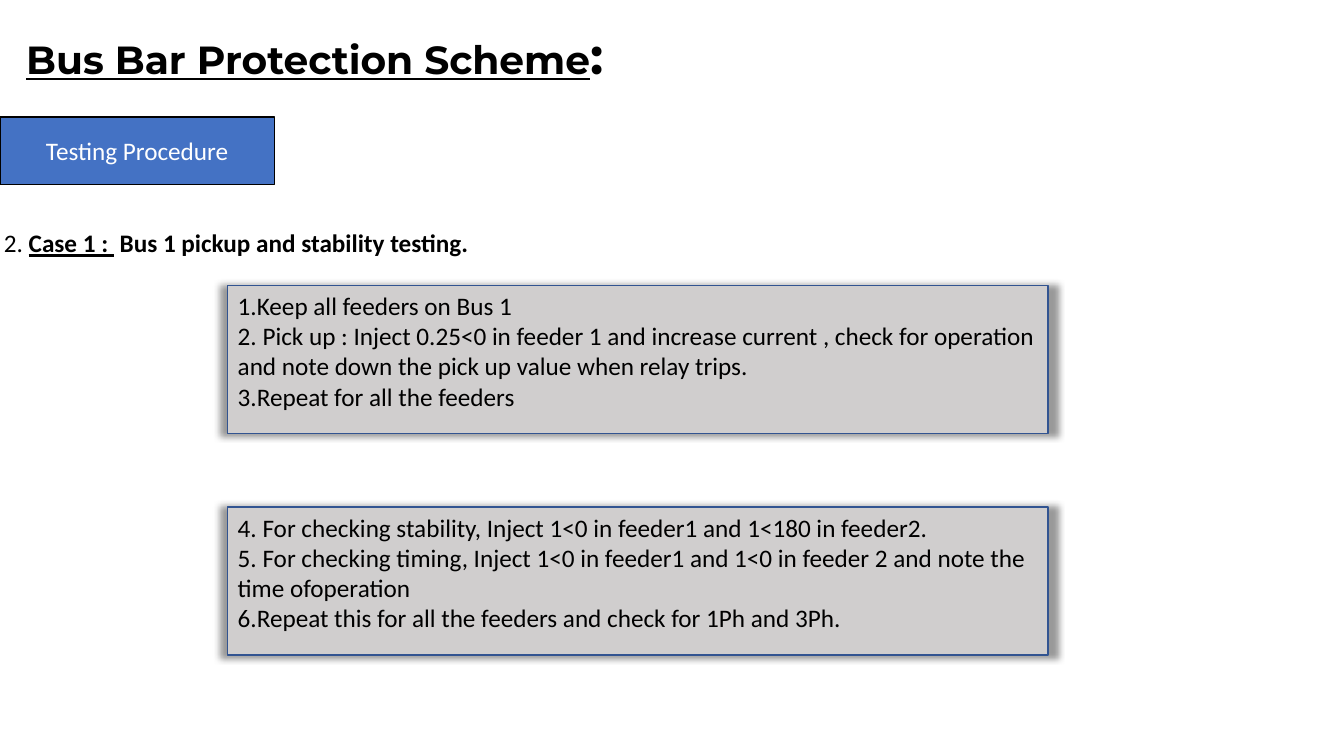
import pptx
import pptx.util
import pptx.oxml
from pptx.dml.color import RGBColor
from pptx.enum.shapes import MSO_SHAPE
from pptx.enum.text import MSO_ANCHOR, PP_ALIGN

Pt = pptx.util.Pt

BLACK = RGBColor(0x00, 0x00, 0x00)
WHITE = RGBColor(0xFF, 0xFF, 0xFF)
BLUE = RGBColor(0x44, 0x72, 0xC4)
NAVY = RGBColor(0x32, 0x54, 0x91)
GREY = RGBColor(0xD0, 0xCE, 0xCE)

STEPS = [
    [
        "1.Keep all feeders on Bus 1",
        "2. Pick up : Inject 0.25<0 in feeder 1 and increase current , "
        "check for operation and note down the pick up value when relay trips.",
        "3.Repeat for all the feeders",
    ],
    [
        "4. For checking stability, Inject 1<0 in feeder1 and 1<180 in feeder2.",
        "5. For checking timing, Inject 1<0 in feeder1 and 1<0 in feeder 2 "
        "and note the time ofoperation",
        "6.Repeat this for all the feeders and check for 1Ph and 3Ph.",
    ],
]

GLOW = (
    '<a:effectLst xmlns:a="http://schemas.openxmlformats.org/drawingml/2006/main">'
    '<a:outerShdw blurRad="63500" sx="102000" sy="102000" algn="ctr" rotWithShape="0">'
    '<a:srgbClr val="000000"><a:alpha val="40000"/></a:srgbClr>'
    '</a:outerShdw></a:effectLst>'
)


def style(para, size, color, name="Calibri"):
    font = para.font
    font.name, font.size, font.color.rgb = name, Pt(size), color


def add_runs(para, parts):
    """Add (text, bold, underline) parts and return the runs."""
    runs = []
    for text, bold, under in parts:
        run = para.add_run()
        run.text, run.font.bold, run.font.underline = text, bold, under
        runs.append(run)
    return runs


def add_title(slide, left, top, width, height):
    title = slide.shapes.title
    title.left, title.top = Pt(left), Pt(top)
    title.width, title.height = Pt(width), Pt(height)
    frame = title.text_frame
    frame.vertical_anchor = MSO_ANCHOR.TOP
    para = frame.paragraphs[0]
    para.alignment = PP_ALIGN.LEFT
    style(para, 28, BLACK, "Montserrat")
    runs = add_runs(para, [("Bus Bar Protection Scheme", True, True),
                           (":", True, False)])
    runs[1].font.size = Pt(36)


def add_panel(slide, left, top, width, height, fill, line):
    panel = slide.shapes.add_shape(
        MSO_SHAPE.RECTANGLE, Pt(left), Pt(top), Pt(width), Pt(height))
    panel.shadow.inherit = False
    panel.fill.solid()
    panel.fill.fore_color.rgb = fill
    panel.line.color.rgb = line
    panel.line.width = Pt(1)
    return panel


def add_label(slide, left, top, width, height):
    frame = add_panel(slide, left, top, width, height, BLUE, BLACK).text_frame
    frame.vertical_anchor = MSO_ANCHOR.MIDDLE
    para = frame.paragraphs[0]
    para.text = "Testing Procedure"
    para.alignment = PP_ALIGN.CENTER
    style(para, 18, WHITE)


def add_case(slide, left, top, width, height):
    box = slide.shapes.add_textbox(Pt(left), Pt(top), Pt(width), Pt(height))
    box.text_frame.word_wrap = False
    para = box.text_frame.paragraphs[0]
    style(para, 18, BLACK)
    add_runs(para, [("2. ", False, False), ("Case 1 : ", True, True),
                    (" Bus 1 pickup and stability testing.", True, False)])


def add_steps(slide, left, top, width, height, lines):
    panel = add_panel(slide, left, top, width, height, GREY, NAVY)
    props = panel.fill._xPr
    props.remove(props.effectLst)
    props.append(pptx.oxml.parse_xml(GLOW))
    frame = panel.text_frame
    frame.vertical_anchor = MSO_ANCHOR.TOP
    frame.text = "\n".join(lines)
    for para in frame.paragraphs:
        para.alignment = PP_ALIGN.LEFT
        style(para, 18, BLACK)


def main():
    deck = pptx.Presentation()
    deck.slide_width, deck.slide_height = Pt(960), Pt(540)
    slide = deck.slides.add_slide(deck.slide_layouts[5])
    add_title(slide, 11.5, 13.7, 864, 51)
    add_label(slide, 0, 83.5, 196, 48.2)
    add_case(slide, -4.3, 159.1, 349, 29)
    for index, lines in enumerate(STEPS):
        add_steps(slide, 162.7, 203.8 + 158.4 * index, 586, 105.8, lines)
    deck.save("out.pptx")


if __name__ == "__main__":
    main()
